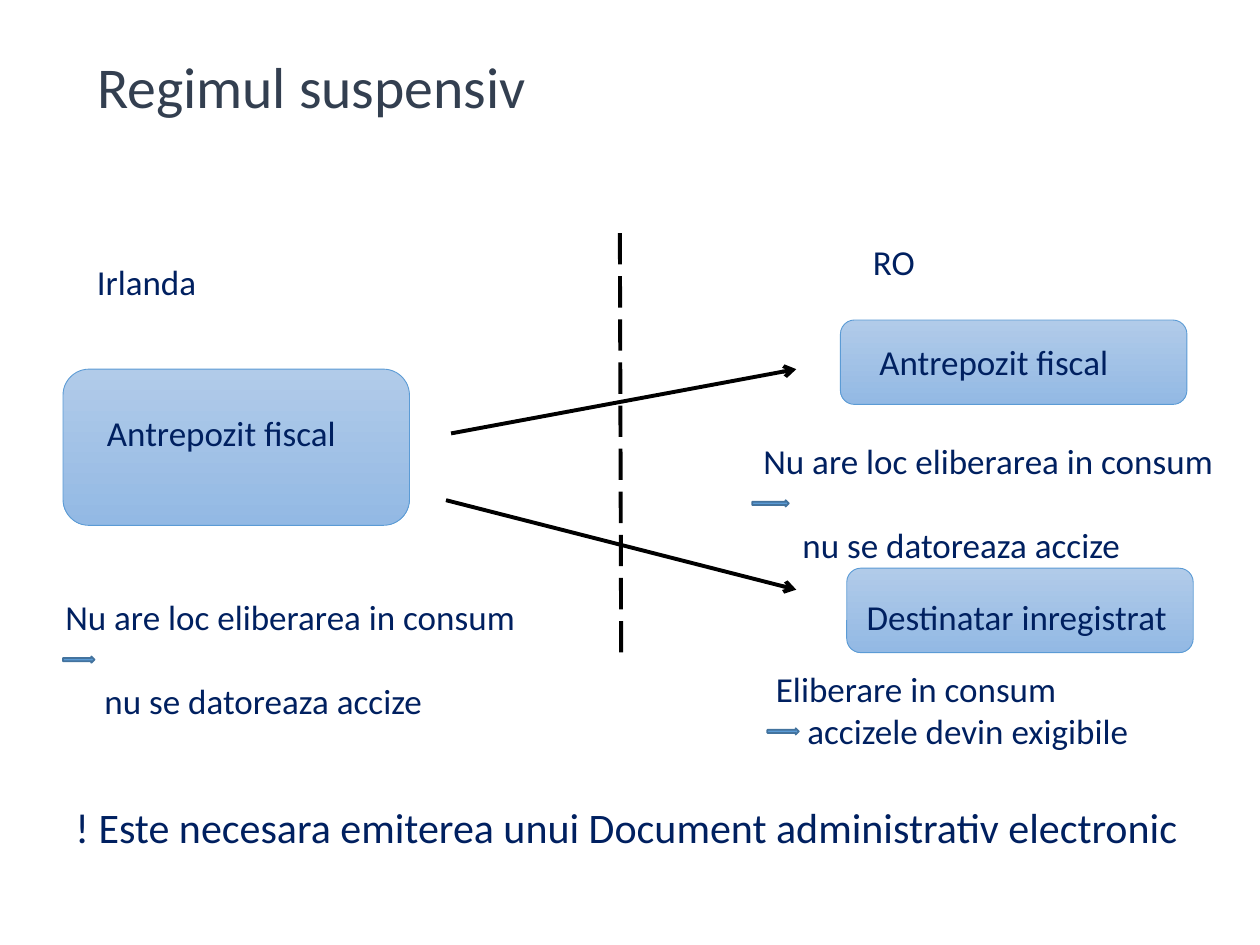
from lxml.etree import SubElement
from pptx import Presentation
from pptx.dml.color import RGBColor
from pptx.enum.dml import MSO_LINE
from pptx.enum.shapes import MSO_CONNECTOR, MSO_SHAPE
from pptx.enum.text import MSO_ANCHOR, MSO_AUTO_SIZE, PP_ALIGN
from pptx.oxml.ns import qn
from pptx.util import Inches, Pt

NAVY = "002060"
BLUE = "5B9BD5"


def paint(color, value):
    """Set a colour object from a hex string."""
    color.rgb = RGBColor.from_string(value)


def add_text(text, left, top, width, height=0.44, size=20, indent=0, gap=0):
    """Add a text box; indent (inches) and gap (points) apply after the first line."""
    box = page.shapes.add_textbox(Inches(left), Inches(top), Inches(width), Inches(height))
    frame = box.text_frame
    frame.word_wrap = True
    frame.auto_size = MSO_AUTO_SIZE.SHAPE_TO_FIT_TEXT
    frame.text = text
    for number, para in enumerate(frame.paragraphs):
        if number:
            para.space_before = Pt(gap)
            props = para._p.get_or_add_pPr()
            props.set("marL", str(Inches(indent)))
            props.set("indent", "0")
        para.font.size = Pt(size)
        para.font.name = "Calibri"
        paint(para.font.color, NAVY)


deck = Presentation()
deck.slide_width, deck.slide_height = Inches(10), Inches(7.5)
page = deck.slides.add_slide(deck.slide_layouts[5])

# Title
title = page.shapes.title
title.left, title.top = Inches(0.67), Inches(0.46)
title.width, title.height = Inches(7.75), Inches(0.5)
title.text_frame.text = "Regimul suspensiv"
title.text_frame.vertical_anchor = MSO_ANCHOR.MIDDLE
heading = title.text_frame.paragraphs[0]
heading.alignment = PP_ALIGN.LEFT
heading.line_spacing = 0.9
heading.font.size = Pt(33)
heading.font.name = "Calibri"
paint(heading.font.color, "333F50")

# Warehouses and recipient
for left, top, height in [(0.5, 2.93, 1.24), (6.67, 2.54, 0.67), (6.72, 4.51, 0.67)]:
    card = page.shapes.add_shape(MSO_SHAPE.ROUNDED_RECTANGLE, Inches(left), Inches(top),
                                 Inches(2.75), Inches(height))
    card.shadow.inherit = False
    card.fill.gradient()
    card.fill.gradient_angle = 270
    for stop, value in zip(card.fill.gradient_stops, ("B1CBE9", "93B9E4")):
        paint(stop.color, value)
    paint(card.line.color, BLUE)
    card.line.width = Pt(0.5)

# Border between the countries, then the two movements across it
for x1, y1, x2, y2, is_border in [(4.92, 1.85, 4.93, 5.24, True),
                                  (3.58, 3.44, 6.32, 2.93, False),
                                  (3.54, 3.97, 6.32, 4.68, False)]:
    link = page.shapes.add_connector(MSO_CONNECTOR.STRAIGHT, Inches(x1), Inches(y1),
                                     Inches(x2), Inches(y2))
    paint(link.line.color, "000000")
    link.line.width = Pt(2.25)
    if is_border:
        link.line.dash_style = MSO_LINE.LONG_DASH
    else:
        SubElement(link.line._get_or_add_ln(), qn("a:tailEnd"), type="arrow")
    SubElement(link._element.spPr, qn("a:effectLst"))

# Labels
add_text("Irlanda", 0.67, 2.02, 2.58)
add_text("RO", 6.83, 1.86, 2.58)
add_text("Antrepozit fiscal", 0.75, 3.22, 2.42)
add_text("Antrepozit fiscal", 6.88, 2.65, 2.42)
add_text("Destinatar inregistrat", 6.78, 4.68, 2.67)

# Consequences for excise duty
for left, top in [(0.42, 4.68), (5.96, 3.44)]:
    add_text("Nu are loc eliberarea in consum\nnu se datoreaza accize",
             left, top, 4.08, 1.11, indent=0.31, gap=24)
add_text("Eliberare in consum\naccizele devin exigibile", 6.06, 5.25, 3.9, 0.77, indent=0.25)

for left, top, width in [(0.5, 5.21, 0.25), (5.97, 3.97, 0.29), (6.09, 5.78, 0.25)]:
    arrow = page.shapes.add_shape(MSO_SHAPE.RIGHT_ARROW, Inches(left), Inches(top),
                                  Inches(width), Inches(0.05))
    arrow.shadow.inherit = False
    arrow.fill.solid()
    paint(arrow.fill.fore_color, BLUE)
    paint(arrow.line.color, "43739E")
    arrow.line.width = Pt(1)

add_text("! Este necesara emiterea unui Document administrativ electronic",
         0.5, 6.31, 9.17, 0.51, size=24)

deck.save("out.pptx")
